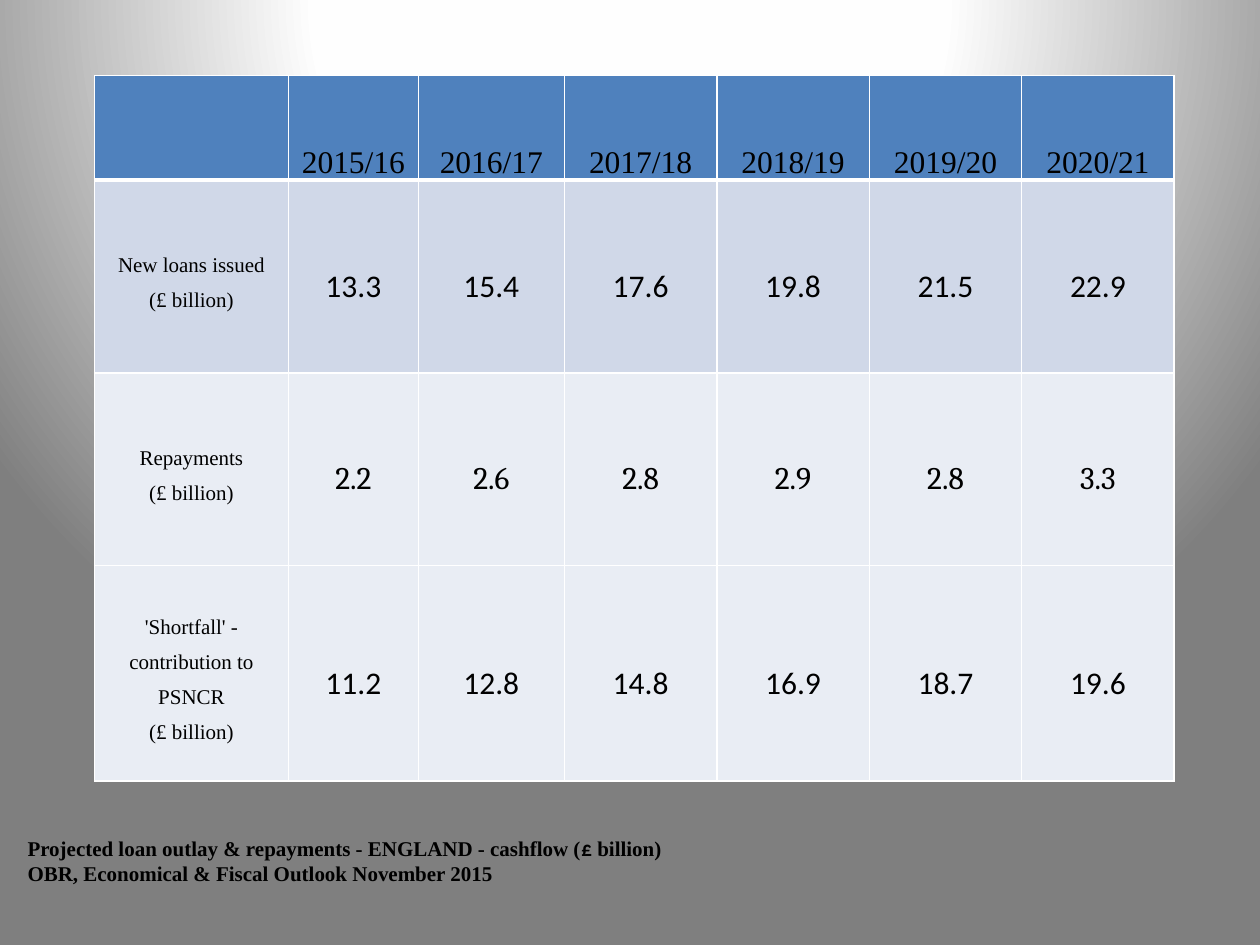
from dataclasses import dataclass

from pptx import Presentation
from pptx.dml.color import RGBColor
from pptx.enum.text import MSO_ANCHOR, MSO_AUTO_SIZE, PP_ALIGN
from pptx.oxml import parse_xml
from pptx.oxml.ns import nsdecls
from pptx.util import Inches, Pt

YEARS = ["2015/16", "2016/17", "2017/18", "2018/19", "2019/20", "2020/21"]
UNIT = "(£ billion)"
SERIES = [
    ("New loans issued", [13.3, 15.4, 17.6, 19.8, 21.5, 22.9]),
    ("Repayments", [2.2, 2.6, 2.8, 2.9, 2.8, 3.3]),
    ("'Shortfall' - contribution to PSNCR", [11.2, 12.8, 14.8, 16.9, 18.7, 19.6]),
]
CAPTION = [
    ["Projected loan outlay & repayments - ENGLAND - cashflow (", "£", " billion)"],
    ["OBR, Economical & Fiscal Outlook November 2015"],
]
COL_WIDTHS = [1.54, 1.03, 1.16] + [1.21] * 4
ROW_HEIGHTS = [0.83, 1.53, 1.53, 1.71]


@dataclass(frozen=True)
class Theme:
    text: str = "000000"
    border: str = "FFFFFF"
    header: str = "4F81BD"
    rows: tuple = ("D0D8E8", "E9EDF4", "E9EDF4")
    gradient: tuple = ((0, "FFFFFF"), (40, "FEFEFE"), (100, "7F7F7F"))
    serif: str = "Times New Roman"
    sans: str = "Calibri"
    value_fonts: tuple = ("Calibri", "Cambria", "Calibri")
    large: int = 18
    small: int = 12


THEME = Theme()


def set_background(slide):
    stops = "".join(
        f'<a:gs pos="{pos * 1000}"><a:srgbClr val="{color}"/></a:gs>'
        for pos, color in THEME.gradient
    )
    bg = parse_xml(
        f'<p:bg {nsdecls("p", "a")}><p:bgPr><a:gradFill rotWithShape="1">'
        f'<a:gsLst>{stops}</a:gsLst><a:path path="circle">'
        '<a:fillToRect l="50000" t="-80000" r="50000" b="180000"/></a:path>'
        '</a:gradFill><a:effectLst/></p:bgPr></p:bg>'
    )
    slide.element.cSld.insert(0, bg)


def set_font(font, name, size, bold=False):
    font.name, font.size, font.bold = name, Pt(size), bold
    font.color.rgb = RGBColor.from_string(THEME.text)


def style_cell(cell, fill, top=1, bottom=1):
    """Set fill, insets and borders; top and bottom are border widths in points."""
    cell.margin_left = cell.margin_right = cell.margin_top = Inches(0.01)
    cell.margin_bottom = 0
    tc_pr = cell._tc.get_or_add_tcPr()
    for side, width in (("L", 1), ("R", 1), ("T", top), ("B", bottom)):
        tc_pr.append(parse_xml(
            f'<a:ln{side} {nsdecls("a")} w="{Pt(width)}"><a:solidFill>'
            f'<a:srgbClr val="{THEME.border}"/></a:solidFill></a:ln{side}>'
        ))
    cell.fill.solid()
    cell.fill.fore_color.rgb = RGBColor.from_string(fill)


def write_cell(cell, lines, font, size, anchor=MSO_ANCHOR.MIDDLE, space_after=0):
    cell.vertical_anchor = anchor
    cell.text = "\n".join(lines)
    for p in cell.text_frame.paragraphs:
        p.alignment = PP_ALIGN.CENTER
        p.line_spacing = 1.5
        p.space_after = Pt(space_after)
        set_font(p.font, font, size)


def add_loan_table(slide):
    table = slide.shapes.add_table(
        len(ROW_HEIGHTS), len(COL_WIDTHS), Inches(0.75), Inches(0.6),
        Inches(sum(COL_WIDTHS)), Inches(sum(ROW_HEIGHTS)),
    ).table
    table.first_row = table.horz_banding = False
    for column, width in zip(table.columns, COL_WIDTHS):
        column.width = Inches(width)
    for row, height in zip(table.rows, ROW_HEIGHTS):
        row.height = Inches(height)

    for c in range(len(COL_WIDTHS)):
        style_cell(table.cell(0, c), THEME.header, bottom=3)
    for c, year in enumerate(YEARS, 1):
        write_cell(table.cell(0, c), [year], THEME.serif, THEME.large, MSO_ANCHOR.BOTTOM)

    styles = zip(SERIES, THEME.rows, THEME.value_fonts)
    for r, ((label, values), fill, font) in enumerate(styles, 1):
        for c in range(len(COL_WIDTHS)):
            style_cell(table.cell(r, c), fill, top=3 if r == 1 else 1)
        write_cell(table.cell(r, 0), [label, UNIT], THEME.serif, THEME.small)
        for c, value in enumerate(values, 1):
            write_cell(table.cell(r, c), [f"{value:.1f}"], font, THEME.large, space_after=10)


def add_caption(slide):
    box = slide.shapes.add_textbox(Inches(0.12), Inches(6.58), Inches(5.31), Inches(0.5))
    tf = box.text_frame
    tf.word_wrap = False
    tf.auto_size = MSO_AUTO_SIZE.SHAPE_TO_FIT_TEXT
    tf.vertical_anchor = MSO_ANCHOR.MIDDLE
    for i, parts in enumerate(CAPTION):
        p = tf.add_paragraph() if i else tf.paragraphs[0]
        for part in parts:
            r = p.add_run()
            r.text = part
            set_font(r.font, THEME.sans if part == "£" else THEME.serif, THEME.small, True)


def main():
    prs = Presentation()
    prs.slide_width, prs.slide_height = Inches(10), Inches(7.5)
    slide = prs.slides.add_slide(prs.slide_layouts[6])
    set_background(slide)
    add_loan_table(slide)
    add_caption(slide)
    prs.save("out.pptx")


if __name__ == "__main__":
    main()
